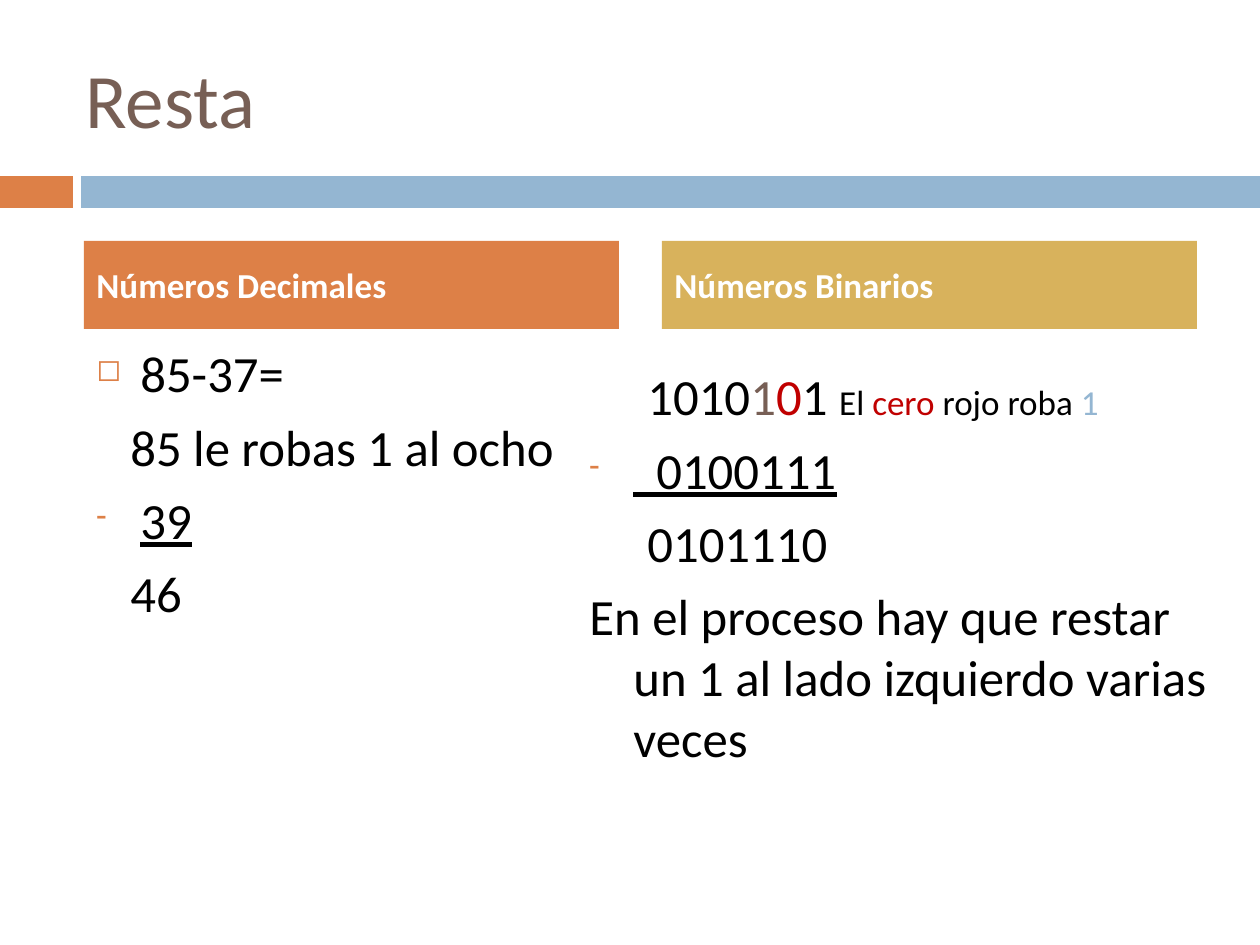
from pptx import Presentation
from pptx.dml.color import RGBColor
from pptx.enum.shapes import MSO_SHAPE
from pptx.enum.text import MSO_ANCHOR, PP_ALIGN
from pptx.oxml import parse_xml
from pptx.oxml.ns import nsdecls
from pptx.util import Emu, Pt

ORANGE = RGBColor(0xDD, 0x80, 0x47)
BLUE = RGBColor(0x94, 0xB6, 0xD2)
GOLD = RGBColor(0xD8, 0xB2, 0x5C)
BROWN = RGBColor(0x77, 0x5F, 0x55)
RED = RGBColor(0xC0, 0x00, 0x00)
BLACK = RGBColor(0x00, 0x00, 0x00)
WHITE = RGBColor(0xFF, 0xFF, 0xFF)

PIXEL = 914400 / 126
HANGING = 44


def add_box(left, top, width, height, fill=None):
    position = [Emu(int(value * PIXEL)) for value in (left, top, width, height)]
    if fill is None:
        shape = slide.shapes.add_textbox(*position)
    else:
        shape = slide.shapes.add_shape(MSO_SHAPE.RECTANGLE, *position)
        shape.shadow.inherit = False
        shape.fill.solid()
        shape.fill.fore_color.rgb = fill
        shape.line.fill.background()
    shape.text_frame.word_wrap = True
    return shape


def add_run(paragraph, text, size, color, bold=False, underline=False):
    run = paragraph.add_run()
    run.text = text
    run.font.name = "Calibri"
    run.font.size = Pt(size)
    run.font.color.rgb = color
    run.font.bold = bold
    run.font.underline = underline


presentation = Presentation()
presentation.slide_width = Emu(int(1260 * PIXEL))
presentation.slide_height = Emu(int(945 * PIXEL))
slide = presentation.slides.add_slide(presentation.slide_layouts[6])

# Band under the title
add_box(0, 176, 73, 32, ORANGE)
add_box(81, 176, 1179, 32, BLUE)

# Title
title = add_box(73, 38, 1124, 120)
title.text_frame.vertical_anchor = MSO_ANCHOR.MIDDLE
add_run(title.text_frame.paragraphs[0], "Resta", 44, BROWN)

# Column headings
for left, heading, fill in ((84, "Números Decimales", ORANGE),
                            (662, "Números Binarios", GOLD)):
    header = add_box(left, 241, 535, 88, fill)
    header.text_frame.vertical_anchor = MSO_ANCHOR.MIDDLE
    paragraph = header.text_frame.paragraphs[0]
    paragraph.alignment = PP_ALIGN.LEFT
    paragraph.space_before = Pt(7)
    add_run(paragraph, heading, 20, WHITE, bold=True)

# Worked subtractions: bullet, left margin, first-line indent, runs
decimal_lines = [
    ("◻", HANGING, -HANGING, [("85-37=", 29, BLACK)]),
    (None, 34, 0, [("85 le robas 1 al ocho", 29, BLACK)]),
    ("-", HANGING, -HANGING, [("39", 29, BLACK, False, True)]),
    (None, 34, 0, [("46", 29, BLACK)]),
]
binary_lines = [
    (None, 58, 0, [("1010", 29, BLACK), ("1", 29, BROWN), ("0", 29, RED),
                   ("1 ", 29, BLACK), ("El ", 20, BLACK), ("cero ", 20, RED),
                   ("rojo roba ", 20, BLACK), ("1", 20, BLUE)]),
    ("-", HANGING, -HANGING, [("  0100111", 29, BLACK, False, True)]),
    (None, 58, 0, [("0101110", 29, BLACK)]),
    (None, HANGING, -HANGING,
     [("En el proceso hay que restar un 1 al lado izquierdo varias veces",
       29, BLACK)]),
]

for position, lines in (((84, 336, 535, 494), decimal_lines),
                        ((577, 359, 651, 544), binary_lines)):
    text_frame = add_box(*position).text_frame
    for index, (bullet, margin, indent, runs) in enumerate(lines):
        paragraph = text_frame.add_paragraph() if index else text_frame.paragraphs[0]
        paragraph.space_before = Pt(7)
        properties = paragraph._p.get_or_add_pPr()
        properties.set("marL", str(int(margin * PIXEL)))
        properties.set("indent", str(int(indent * PIXEL)))
        if bullet:
            for element in (f'<a:buClr {nsdecls("a")}><a:srgbClr val="{ORANGE}"/></a:buClr>',
                            f'<a:buSzPct {nsdecls("a")} val="60000"/>',
                            f'<a:buChar {nsdecls("a")} char="{bullet}"/>'):
                properties.append(parse_xml(element))
        for run in runs:
            add_run(paragraph, *run)

presentation.save("out.pptx")
